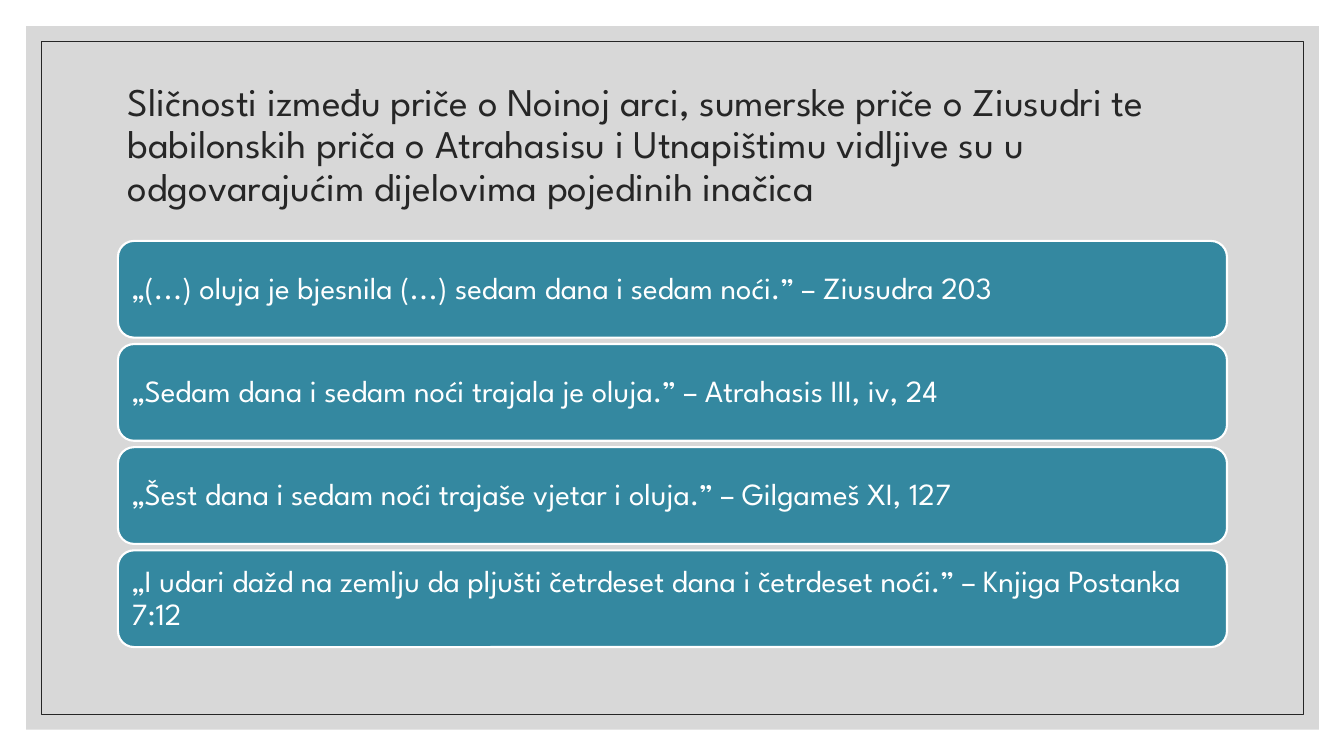
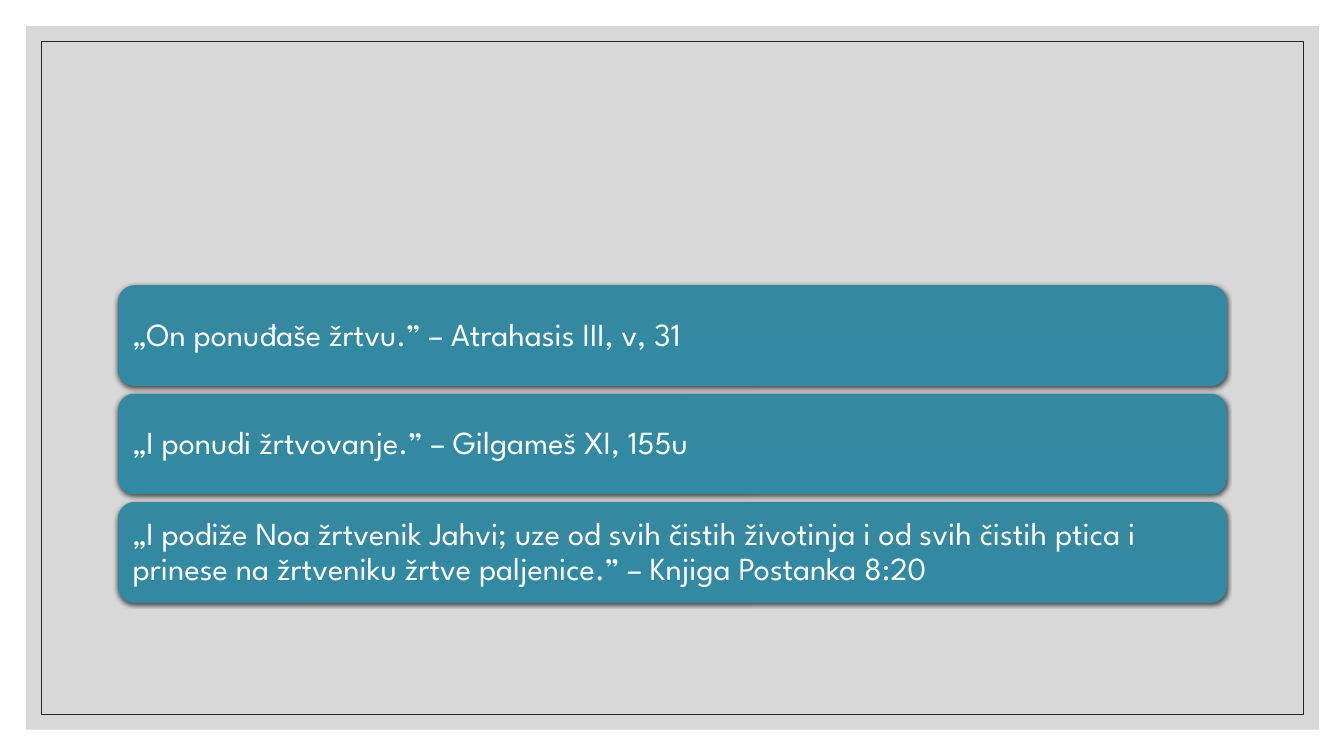
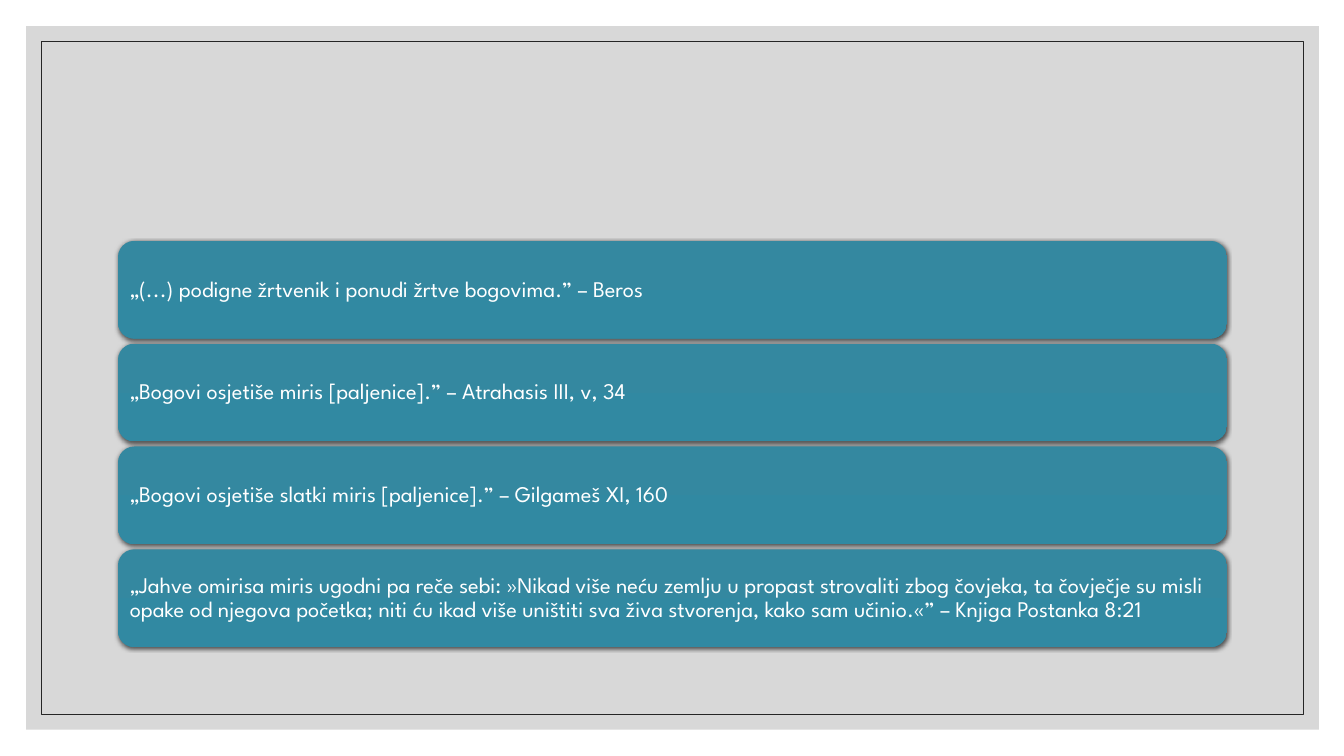
from copy import deepcopy
from dataclasses import dataclass

from pptx import Presentation
from pptx.dml.color import RGBColor
from pptx.enum.shapes import MSO_SHAPE as Shape
from pptx.enum.text import MSO_ANCHOR as Anchor, PP_ALIGN as Align
from pptx.oxml import parse_xml
from pptx.oxml.ns import nsdecls, qn
from pptx.util import Inches, Pt

FONT = "League Spartan"
DARK, WHITE, GREY, TEAL = "262626", "FFFFFF", "BFBFBF", "3488A0"
GRADIENT = [(0, TEAL), (0.5, "3189A2"), (1, "3188A1")]
LEFT, WIDTH = 1.17, 11
TITLE = (
    "Sličnosti između priče o Noinoj arci, sumerske priče o Ziusudri te "
    "babilonskih priča o Atrahasisu i Utnapištimu vidljive su u "
    "odgovarajućim dijelovima pojedinih inačica"
)


@dataclass
class QuoteSlide:
    quotes: list[str]
    top: float
    bottom: float
    height: float
    size: float
    inset: float
    title: str = ""
    raised: bool = True  # gradient and shadow instead of a white outline


SLIDES = [
    QuoteSlide(
        [
            "„(...) oluja je bjesnila (...) sedam dana i sedam noći.” – Ziusudra 203",
            "„Sedam dana i sedam noći trajala je oluja.” – Atrahasis III, iv, 24",
            "„Šest dana i sedam noći trajaše vjetar i oluja.” – Gilgameš XI, 127",
            "„I udari dažd na zemlju da pljušti četrdeset dana i četrdeset noći.” "
            "– Knjiga Postanka 7:12",
        ],
        top=2.39, bottom=6.42, height=0.96, size=22, inset=0.09,
        title=TITLE, raised=False,
    ),
    QuoteSlide(
        [
            "„On ponuđaše žrtvu.” – Atrahasis III, v, 31",
            "„I ponudi žrtvovanje.” – Gilgameš XI, 155u",
            "„I podiže Noa žrtvenik Jahvi; uze od svih čistih životinja i od svih "
            "čistih ptica i prinese na žrtveniku žrtve paljenice.” – Knjiga Postanka 8:20",
        ],
        top=2.83, bottom=5.98, height=1, size=23, inset=0.1,
    ),
    QuoteSlide(
        [
            "„(...) podigne žrtvenik i ponudi žrtve bogovima.” – Beros",
            "„Bogovi osjetiše miris [paljenice].” – Atrahasis III, v, 34",
            "„Bogovi osjetiše slatki miris [paljenice].” – Gilgameš XI, 160",
            "„Jahve omirisa miris ugodni pa reče sebi: »Nikad više neću zemlju u propast "
            "strovaliti zbog čovjeka, ta čovječje su misli opake od njegova početka; niti "
            "ću ikad više uništiti sva živa stvorenja, kako sam učinio.«” "
            "– Knjiga Postanka 8:21",
        ],
        top=2.39, bottom=6.42, height=0.97, size=16, inset=0.07,
    ),
]


def color(value: str) -> RGBColor:
    return RGBColor.from_string(value)


def add_box(page, kind, left: float, top: float, width: float, height: float,
            fill: str = "", line: str = "", line_width: float = 0):
    box = page.shapes.add_shape(
        kind, Inches(left), Inches(top), Inches(width), Inches(height))
    box.shadow.inherit = False
    if fill:
        box.fill.solid()
        box.fill.fore_color.rgb = color(fill)
    else:
        box.fill.background()
    if line:
        box.line.color.rgb = color(line)
        box.line.width = Pt(line_width)
    else:
        box.line.fill.background()
    return box


def write(box, text: str, size: float, ink: str, inset: float) -> None:
    frame = box.text_frame
    frame.text = text
    frame.word_wrap = True
    frame.vertical_anchor = Anchor.MIDDLE
    frame.margin_left = frame.margin_right = Inches(inset)
    frame.margin_top = frame.margin_bottom = Inches(min(inset, 0.1))
    para = frame.paragraphs[0]
    para.alignment = Align.LEFT
    para.line_spacing = 0.9
    font = para.runs[0].font
    font.name, font.size = FONT, Pt(size)
    font.color.rgb = color(ink)


def raise_box(box) -> None:
    # Three-stop vertical gradient
    box.fill.gradient()
    box.fill.gradient_angle = 270
    stops = box.element.spPr.find(qn("a:gradFill")).find(qn("a:gsLst"))
    stops.insert(1, deepcopy(stops[0]))
    for stop, (position, value) in zip(box.fill.gradient_stops, GRADIENT):
        stop.position = position
        stop.color.rgb = color(value)
    # Soft shadow below
    box.element.spPr.find(qn("a:effectLst")).append(parse_xml(
        f'<a:outerShdw {nsdecls("a")} blurRad="{Pt(3)}" dist="{Pt(1)}" dir="5400000" '
        'algn="ctr" rotWithShape="0"><a:srgbClr val="000000">'
        '<a:alpha val="63000"/></a:srgbClr></a:outerShdw>'))


def add_background(page) -> None:
    panel = add_box(page, Shape.RECTANGLE, 0.26, 0.26, 12.82, 6.98, fill=GREY)
    tint = panel.element.spPr.find(qn("a:solidFill")).find(qn("a:srgbClr"))
    tint.append(parse_xml(f'<a:alpha {nsdecls("a")} val="60000"/>'))
    add_box(page, Shape.RECTANGLE, 0.41, 0.41, 12.52, 6.68, line=DARK, line_width=0.5)


def add_title(page, text: str) -> None:
    box = page.shapes.add_textbox(Inches(LEFT), Inches(0.7), Inches(WIDTH), Inches(1.5))
    write(box, text, 28, DARK, 0.1)


def add_quotes(page, content: QuoteSlide) -> None:
    pitch = (content.bottom - content.height - content.top) / (len(content.quotes) - 1)
    for index, quote in enumerate(content.quotes):
        box = add_box(page, Shape.ROUNDED_RECTANGLE, LEFT, content.top + index * pitch,
                      WIDTH, content.height, fill=TEAL,
                      line="" if content.raised else WHITE, line_width=1.5)
        if content.raised:
            raise_box(box)
        write(box, quote, content.size, WHITE, content.inset)


def main() -> None:
    deck = Presentation()
    deck.slide_width, deck.slide_height = Inches(13.33), Inches(7.5)
    for content in SLIDES:
        page = deck.slides.add_slide(deck.slide_layouts[6])
        add_background(page)
        if content.title:
            add_title(page, content.title)
        add_quotes(page, content)
    deck.save("out.pptx")


if __name__ == "__main__":
    main()
